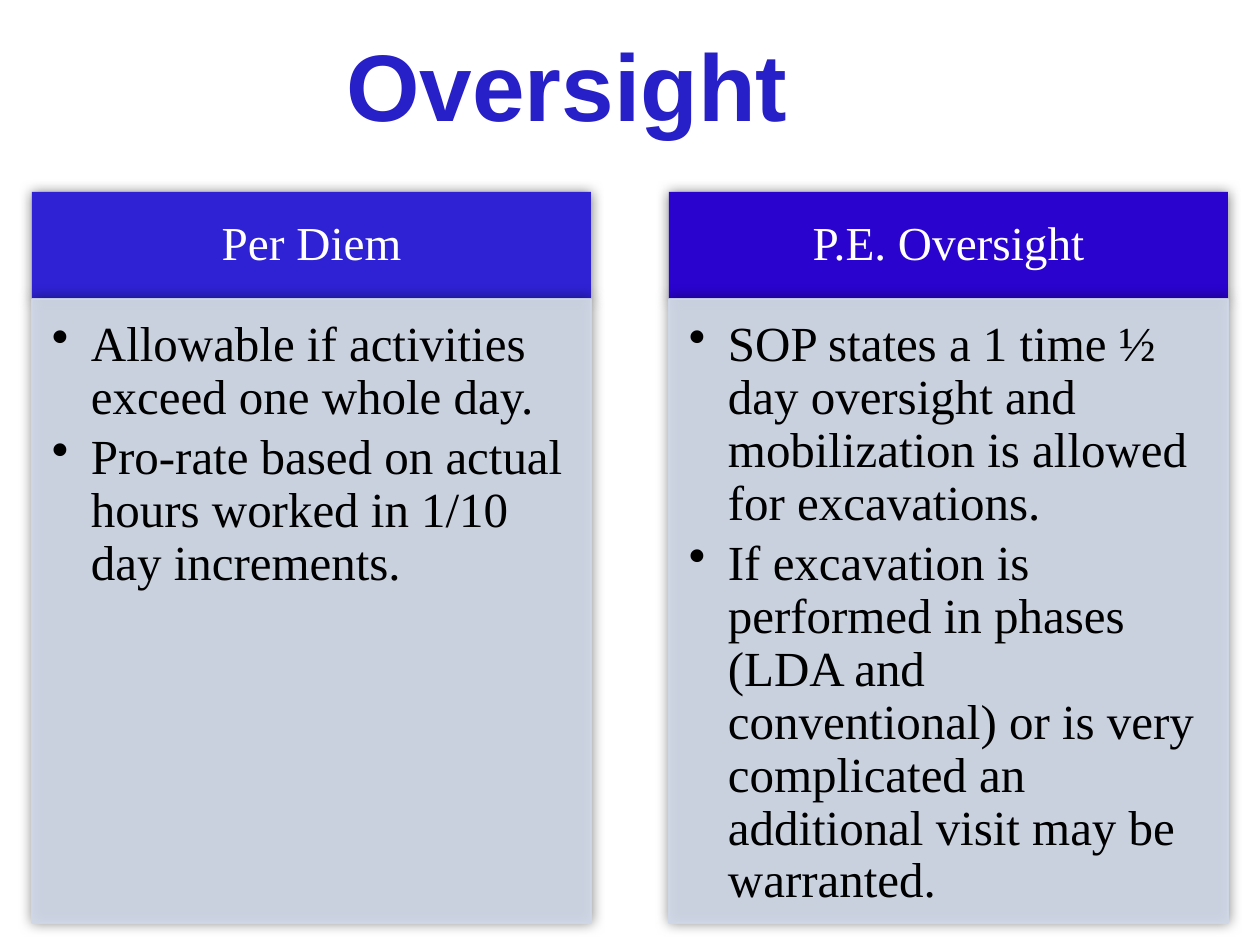
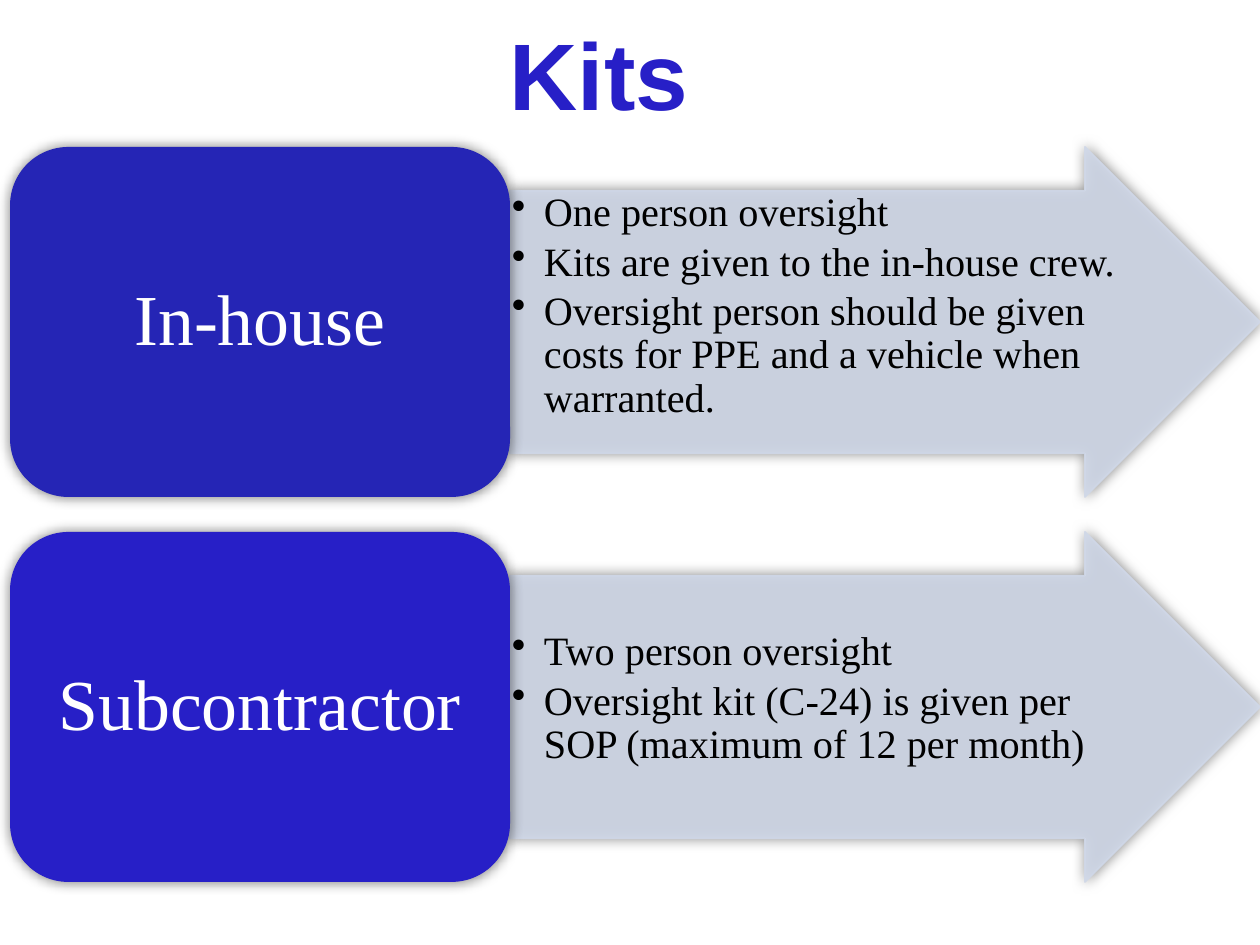
from lxml import etree
from pptx import Presentation
from pptx.dml.color import RGBColor
from pptx.enum.shapes import MSO_SHAPE as Preset
from pptx.enum.text import MSO_ANCHOR as Anchor, MSO_AUTO_SIZE as AutoSize, PP_ALIGN as Align
from pptx.oxml.ns import qn
from pptx.util import Pt

# Content
OVERSIGHT_COLUMNS = [
    ("Per Diem", RGBColor(0x2F, 0x22, 0xD4), [
        "Allowable if activities exceed one whole day.",
        "Pro-rate based on actual hours worked in 1/10 day increments.",
    ]),
    ("P.E. Oversight", RGBColor(0x2A, 0x03, 0xCF), [
        "SOP states a 1 time ½ day oversight and mobilization is allowed for excavations.",
        "If excavation is performed in phases (LDA and conventional) or is very "
        "complicated an additional visit may be warranted.",
    ]),
]
# Each kit row: label, label fill, space above the list in px, list
KIT_ROWS = [
    ("In-house", RGBColor(0x25, 0x25, 0xB5), 2, [
        "One person oversight",
        "Kits are given to the in-house crew.",
        "Oversight person should be given costs for PPE and a vehicle when warranted.",
    ]),
    ("Subcontractor", RGBColor(0x27, 0x1F, 0xC7), 56, [
        "Two person oversight",
        "Oversight kit (C-24) is given per SOP (maximum of 12 per month)",
    ]),
]

# Shared style
TITLE_BLUE = RGBColor(0x27, 0x1F, 0xC7)
PANEL = RGBColor(0xD0, 0xD8, 0xE8)
WHITE = RGBColor(0xFF, 0xFF, 0xFF)
BLACK = RGBColor(0x00, 0x00, 0x00)
TITLE_FONT, BODY_FONT = "Arial", "Times New Roman"
SLIDE_WIDTH, SLIDE_HEIGHT = 1260, 945
EMU_PER_PX = 914400 / 126


def px(length):
    return round(length * EMU_PER_PX)


def add_child(parent, tag, **attributes):
    child = etree.SubElement(parent, qn(tag))
    for name, value in attributes.items():
        child.set(name, str(value))
    return child


def add_text(slide, text, box, *, size, color, font=BODY_FONT, bold=False, align=Align.LEFT,
             anchor=Anchor.TOP, insets=(13, 6, 13, 6), indent=0, line_spacing=None,
             space_after=0, auto_size=AutoSize.NONE, wrap=True):
    """Add a text box; a list of strings becomes paragraphs, bulleted if indented."""
    frame = slide.shapes.add_textbox(*map(px, box)).text_frame
    frame.word_wrap = wrap
    frame.auto_size = auto_size
    frame.vertical_anchor = anchor
    (frame.margin_left, frame.margin_top,
     frame.margin_right, frame.margin_bottom) = map(px, insets)
    lines = [text] if isinstance(text, str) else text
    for index, line in enumerate(lines):
        paragraph = frame.add_paragraph() if index else frame.paragraphs[0]
        paragraph.alignment = align
        if line_spacing:
            paragraph.line_spacing = line_spacing
            paragraph.space_after = Pt(round(size * space_after, 1))
        if indent:
            paragraph.level = 1
            properties = paragraph._p.get_or_add_pPr()
            properties.set("marL", str(px(indent)))
            properties.set("indent", str(-px(indent)))
            add_child(properties, "a:buChar", char="•")
        run = paragraph.add_run()
        run.text = line
        run.font.name, run.font.size, run.font.bold = font, Pt(size), bold
        run.font.color.rgb = color


def add_title(slide, text, box, wrap=True):
    add_text(slide, text, box, size=54, color=TITLE_BLUE, font=TITLE_FONT, bold=True,
             align=Align.CENTER, auto_size=AutoSize.SHAPE_TO_FIT_TEXT, wrap=wrap)


def add_label(slide, text, box, size, insets):
    add_text(slide, text, box, size=size, color=WHITE, align=Align.CENTER,
             anchor=Anchor.MIDDLE, insets=insets, line_spacing=0.9, space_after=0.35)


def add_bullets(slide, items, box, size, insets, indent):
    add_text(slide, items, box, size=size, color=BLACK, insets=insets, indent=indent,
             line_spacing=0.9, space_after=0.15)


def add_block(slide, preset, box, color):
    """Add a filled shape with a soft shadow all round."""
    shape = slide.shapes.add_shape(preset, *map(px, box))
    shape.fill.solid()
    shape.fill.fore_color.rgb = color
    shape.line.fill.background()
    shape.shadow.inherit = False
    effects = shape._element.spPr.find(qn("a:effectLst"))
    shadow = add_child(effects, "a:outerShdw", blurRad=Pt(7.5), dist=0, dir=0,
                       algn="ctr", rotWithShape=0)
    add_child(add_child(shadow, "a:srgbClr", val=BLACK), "a:alpha", val=50000)
    return shape


def add_panel(slide, preset, box):
    """Add a slightly transparent panel with a matching outline."""
    panel = add_block(slide, preset, box, PANEL)
    panel.line.color.rgb = PANEL
    panel.line.width = Pt(1)
    for color in panel._element.spPr.iter(qn("a:srgbClr")):
        if color.getparent().tag == qn("a:solidFill"):
            add_child(color, "a:alpha", val=90000)
    return panel


def build_oversight(slide):
    add_title(slide, "Oversight", (126, 21, 882, 127))
    margin, width, top, header_height, body_height = 32, 559, 192, 107, 624
    pitch = SLIDE_WIDTH - 2 * margin - width
    for index, (heading, color, items) in enumerate(OVERSIGHT_COLUMNS):
        left = margin + index * pitch
        header = (left, top, width, header_height)
        body = (left, top + header_height, width, body_height)
        add_block(slide, Preset.RECTANGLE, header, color)
        add_label(slide, heading, header, 27, (26, 15, 26, 15))
        add_panel(slide, Preset.RECTANGLE, body)
        add_bullets(slide, items, body, 28, (20, 20, 28, 30), 39)


def build_kits(slide):
    add_title(slide, "Kits", (483, 10, 232, 127), wrap=False)
    label_left, label_width, top, height, pitch = 10, 500, 147, 350, 385
    arrow_left = label_left + label_width
    arrow_width = SLIDE_WIDTH - arrow_left
    shaft_inset, corner_inset = height // 8, 17
    for index, (label, color, space_above, items) in enumerate(KIT_ROWS):
        row_top = top + index * pitch
        arrow = add_panel(slide, Preset.RIGHT_ARROW, (arrow_left, row_top, arrow_width, height))
        arrow.adjustments[0], arrow.adjustments[1] = 0.75, 0.5
        add_bullets(slide, items,
                    (arrow_left, row_top + shaft_inset, 619, height - 2 * shaft_inset),
                    23, (2, space_above, 2, 2), 32)
        add_block(slide, Preset.ROUNDED_RECTANGLE,
                  (label_left, row_top, label_width, height), color)
        add_label(slide, label,
                  (label_left + corner_inset, row_top + corner_inset,
                   label_width - 2 * corner_inset, height - 2 * corner_inset),
                  41, (21, 11, 21, 11))


def main():
    presentation = Presentation()
    presentation.slide_width, presentation.slide_height = px(SLIDE_WIDTH), px(SLIDE_HEIGHT)
    blank = presentation.slide_layouts[6]
    for build in (build_oversight, build_kits):
        build(presentation.slides.add_slide(blank))
    presentation.save("out.pptx")


if __name__ == "__main__":
    main()
